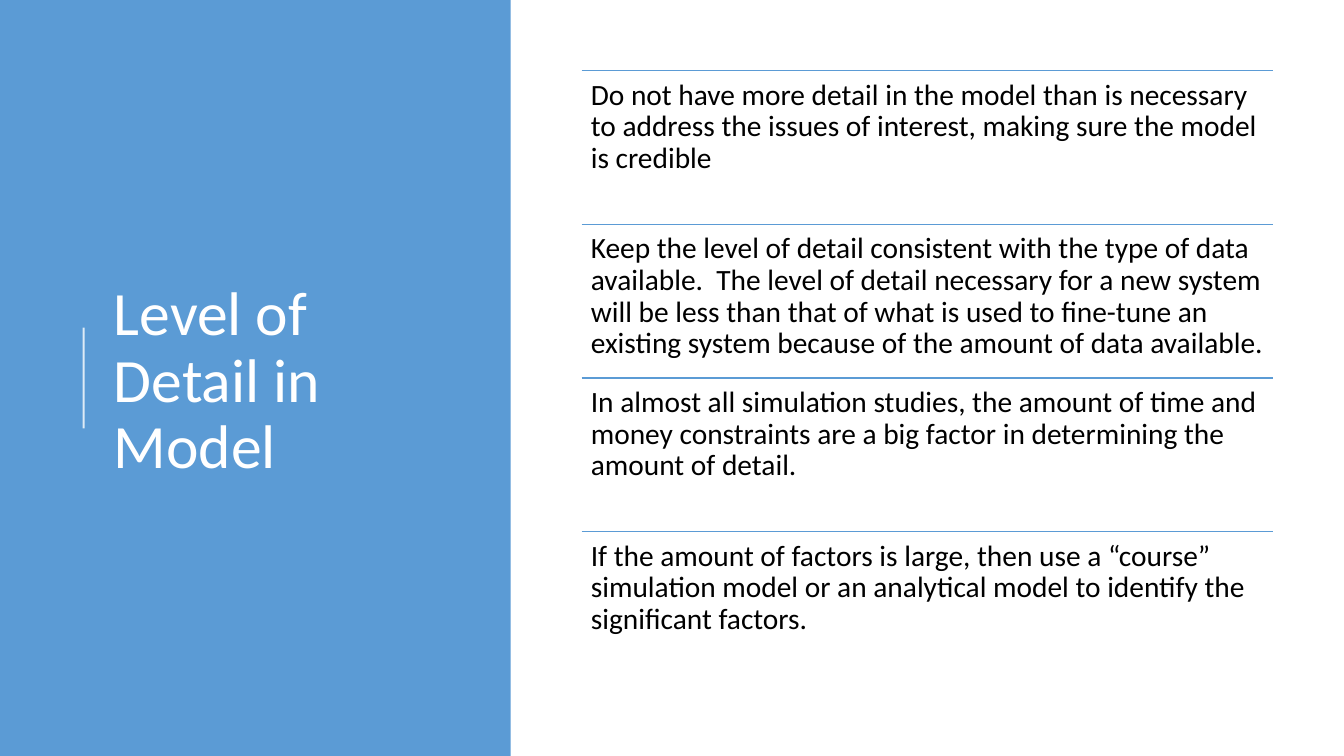
from lxml import etree
from pptx import Presentation
from pptx.dml.color import RGBColor
from pptx.enum.shapes import MSO_CONNECTOR, MSO_SHAPE
from pptx.enum.text import MSO_ANCHOR
from pptx.oxml.ns import qn
from pptx.util import Inches, Pt

STRAIGHT = MSO_CONNECTOR.STRAIGHT
RECTANGLE = MSO_SHAPE.RECTANGLE
TOP, MIDDLE = MSO_ANCHOR.TOP, MSO_ANCHOR.MIDDLE

BLUE = RGBColor(0x5B, 0x9B, 0xD5)
WHITE = RGBColor(0xFF, 0xFF, 0xFF)
BLACK = RGBColor(0x00, 0x00, 0x00)
FONT = "Calibri"
SLIDE_W, SLIDE_H = 13.33, 7.5

TITLE = "Level of Detail in Model"
POINTS = [
    "Do not have more detail in the model than is necessary to address the "
    "issues of interest, making sure the model is credible",
    "Keep the level of detail consistent with the type of data available.  "
    "The level of detail necessary for a new system will be less than that of "
    "what is used to fine-tune an existing system because of the amount of "
    "data available.",
    "In almost all simulation studies, the amount of time and money "
    "constraints are a big factor in determining the amount of detail.",
    "If the amount of factors is large, then use a “course” simulation model "
    "or an analytical model to identify the significant factors.",
]


def add_line(slide, x1, y1, x2, y2, color, width, opacity=100):
    line = slide.shapes.add_connector(
        STRAIGHT, Inches(x1), Inches(y1), Inches(x2), Inches(y2))
    line.line.color.rgb = color
    line.line.width = Pt(width)
    sp_pr = line._element.spPr
    if opacity < 100:
        rgb = sp_pr.find(".//" + qn("a:srgbClr"))
        etree.SubElement(rgb, qn("a:alpha")).set("val", str(opacity * 1000))
    etree.SubElement(sp_pr, qn("a:effectLst"))


def add_text(slide, box, text, size, color, anchor, inset_x, inset_y):
    tf = slide.shapes.add_textbox(*map(Inches, box)).text_frame
    tf.word_wrap = True
    tf.vertical_anchor = anchor
    tf.margin_left = tf.margin_right = Inches(inset_x)
    tf.margin_top = tf.margin_bottom = Inches(inset_y)
    p = tf.paragraphs[0]
    p.text = text
    p.line_spacing = 0.9
    font = p.runs[0].font
    font.name, font.size, font.color.rgb = FONT, Pt(size), color


def add_title_panel(slide, box):
    x, y, w, h = box
    panel = slide.shapes.add_shape(RECTANGLE, *map(Inches, box))
    panel.shadow.inherit = False
    panel.fill.solid()
    panel.fill.fore_color.rgb = BLUE
    panel.line.fill.background()

    # Accent rule, centred on the panel's height
    rule_x, middle = x + 0.83, y + h / 2
    add_line(slide, rule_x, middle + 0.5, rule_x, middle - 0.5, WHITE, 1.5, 80)

    # Title beside the rule
    add_text(slide, (rule_x + 0.2, y + 0.78, w - 1.38, 6.02), TITLE, 44,
             WHITE, MIDDLE, 0.1, 0.05)


def add_point_list(slide, box, points):
    x, y, w, h = box
    row_h = h / len(points)
    for i, point in enumerate(points):
        top = y + i * row_h
        add_line(slide, x, top, x + w, top, BLUE, 1)
        add_text(slide, (x, top, w, row_h), point, 21, BLACK, TOP, 0.09, 0.09)


def main():
    prs = Presentation()
    prs.slide_width, prs.slide_height = Inches(SLIDE_W), Inches(SLIDE_H)
    slide = prs.slides.add_slide(prs.slide_layouts[6])
    add_title_panel(slide, (0, 0, 0.38 * SLIDE_W, SLIDE_H))
    add_point_list(slide, (5.77, 0.7, 6.86, 6.1), POINTS)
    prs.save("out.pptx")


if __name__ == "__main__":
    main()
